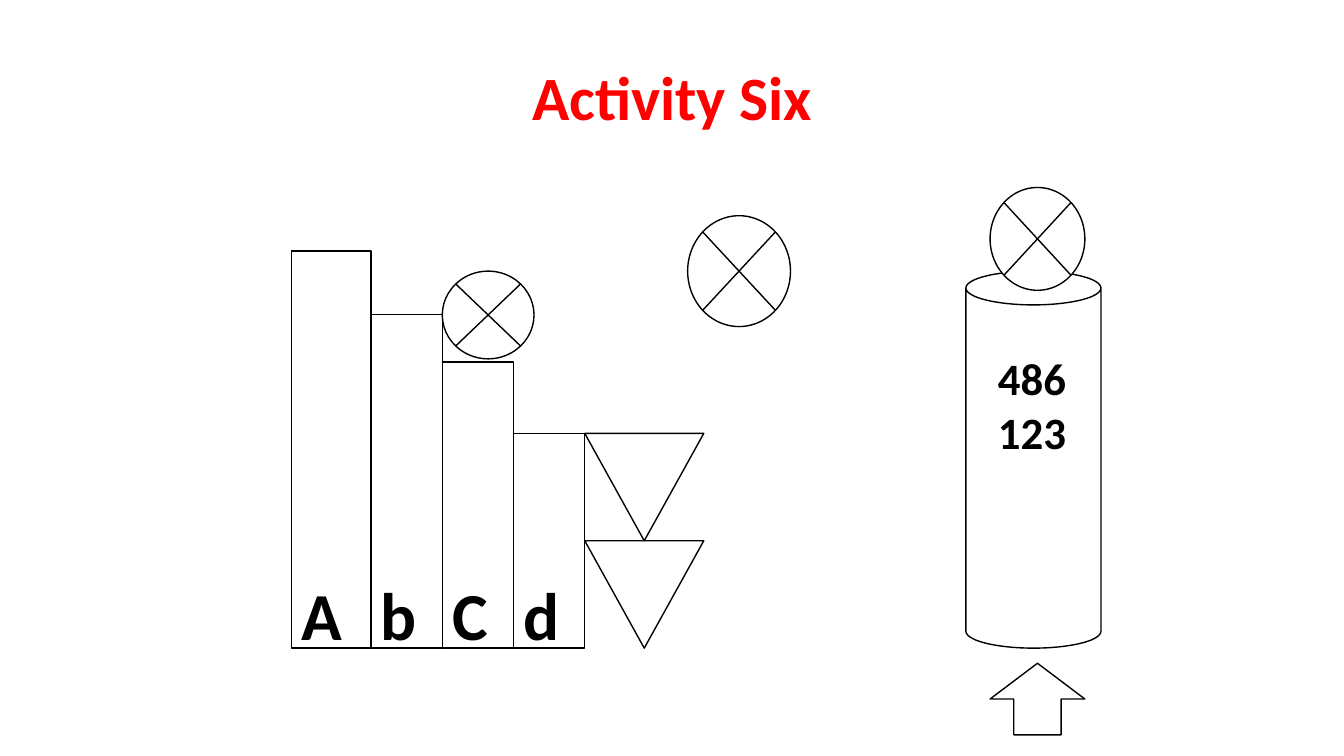
from dataclasses import dataclass

from pptx import Presentation
from pptx.dml.color import RGBColor
from pptx.enum.shapes import MSO_SHAPE
from pptx.enum.text import MSO_ANCHOR, PP_ALIGN
from pptx.util import Inches, Pt

BAR = MSO_SHAPE.RECTANGLE
JUNCTION = MSO_SHAPE.FLOWCHART_SUMMING_JUNCTION
TRIANGLE = MSO_SHAPE.FLOWCHART_MERGE
CAN = MSO_SHAPE.CAN
ARROW = MSO_SHAPE.UP_ARROW
BOTTOM = MSO_ANCHOR.BOTTOM
TOP = MSO_ANCHOR.TOP
CENTER = PP_ALIGN.CENTER
LEFT = PP_ALIGN.LEFT


@dataclass(frozen=True)
class Theme:
    font: str = "Calibri"
    ink: RGBColor = RGBColor(0, 0, 0)
    paper: RGBColor = RGBColor(255, 255, 255)
    accent: RGBColor = RGBColor(255, 0, 0)
    title_size: int = 44
    letter_size: int = 48
    number_size: int = 32
    line_width: int = 1


THEME = Theme()


def add_outline(page, kind, left, top, width, height):
    shape = page.shapes.add_shape(
        kind, Inches(left), Inches(top), Inches(width), Inches(height))
    shape.shadow.inherit = False
    shape.fill.solid()
    shape.fill.fore_color.rgb = THEME.paper
    shape.line.color.rgb = THEME.ink
    shape.line.width = Pt(THEME.line_width)


def add_text(page, box, lines, size, color=THEME.ink, align=LEFT,
             anchor=TOP, spacing=1.0):
    frame = page.shapes.add_textbox(*map(Inches, box)).text_frame
    frame.word_wrap = True
    frame.vertical_anchor = anchor
    frame.text = "\n".join(lines)
    for para in frame.paragraphs:
        para.alignment = align
        para.line_spacing = spacing
        para.font.name = THEME.font
        para.font.size = Pt(size)
        para.font.bold = True
        para.font.color.rgb = color


def add_title(page, box):
    add_text(page, box, ["Activity Six"], THEME.title_size, THEME.accent,
             CENTER, BOTTOM, 0.9)


def add_staircase(page, box):
    left, top, width, height = box
    base = top + height
    first_width = 0.79
    step_width = (width - first_width) / 3
    steps = [("A", height), ("b", 3.31), ("C", 2.84), ("d", 2.13)]
    bars = []
    bar_left = left
    for index, (letter, bar_height) in enumerate(steps):
        bar_width = step_width if index else first_width
        add_outline(page, BAR, bar_left, base - bar_height, bar_width, bar_height)
        bars.append((letter, bar_left, bar_width))
        bar_left += bar_width
    add_outline(page, JUNCTION, bars[2][1], top + 0.2, 0.91, 0.87)
    triangle_height = steps[-1][1] / 2
    for level in (1, 2):
        add_outline(page, TRIANGLE, left + width, base - level * triangle_height,
                    1.18, triangle_height)
    for letter, letter_left, letter_width in bars:
        add_text(page, (letter_left, base - 0.79, letter_width, 0.91),
                 [letter], THEME.letter_size)


def add_cylinder(page, box):
    left, top, width, height = box
    inner_left, inner_width = left + 0.24, 0.94
    add_outline(page, CAN, left, top, width, height)
    add_outline(page, JUNCTION, inner_left, top - 0.83, inner_width, 1.02)
    add_outline(page, ARROW, inner_left, top + height + 0.15, inner_width, 0.71)
    add_text(page, (left + 0.22, top + 0.74, inner_width, 1.18),
             ["486", "123"], THEME.number_size)


def main():
    deck = Presentation()
    deck.slide_width = Inches(13.33)
    deck.slide_height = Inches(7.5)
    page = deck.slides.add_slide(deck.slide_layouts[6])
    add_title(page, (2.17, 0.39, 9, 0.99))
    add_staircase(page, (2.89, 2.49, 2.91, 3.94))
    add_cylinder(page, (9.58, 2.69, 1.34, 3.74))
    add_outline(page, JUNCTION, 6.82, 2.14, 1.02, 1.1)
    deck.save("out.pptx")


if __name__ == "__main__":
    main()
